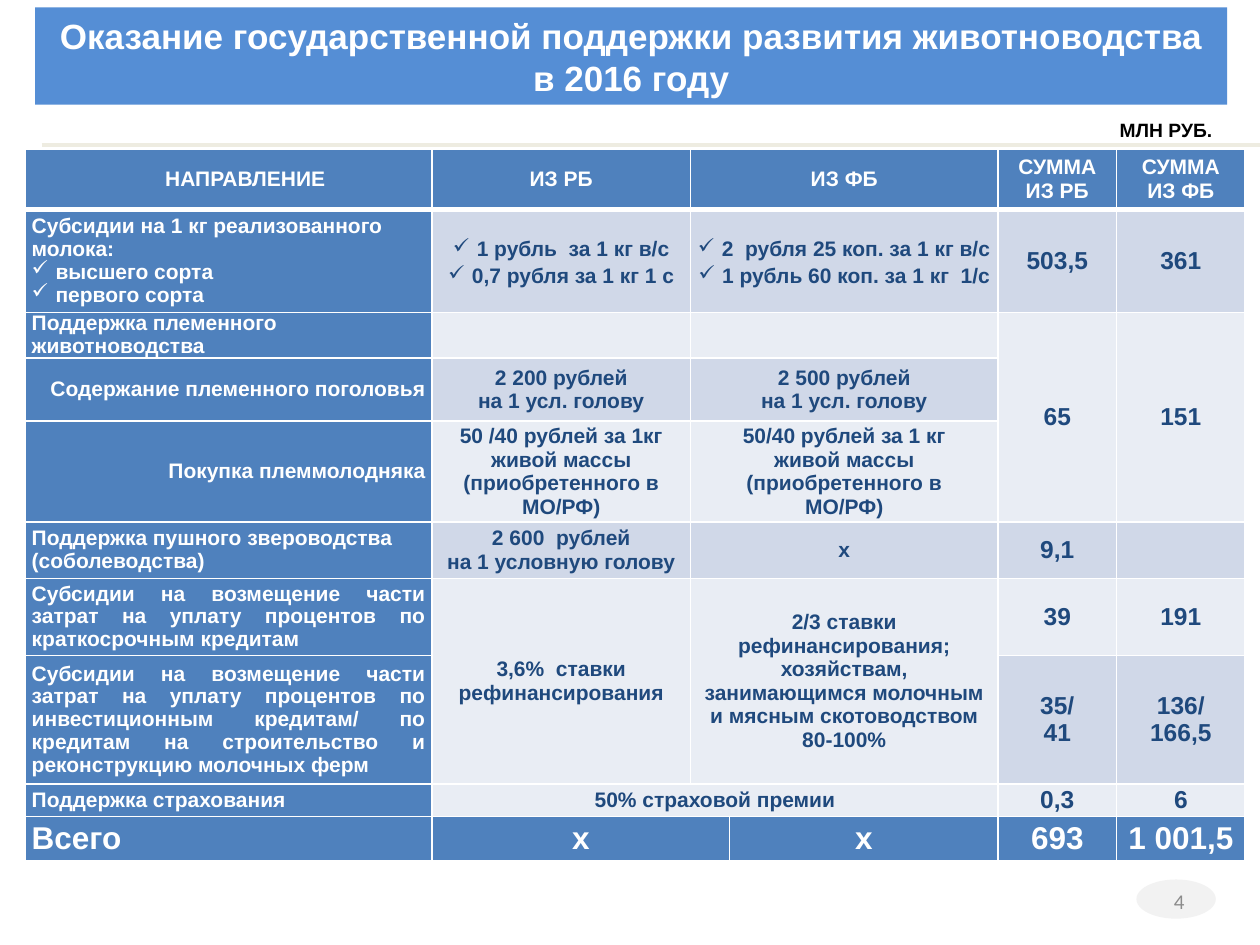
import dataclasses

import lxml.etree
import pptx
import pptx.dml.color
import pptx.enum.shapes
import pptx.enum.text
import pptx.oxml.ns
import pptx.util

Cm = pptx.util.Cm
Pt = pptx.util.Pt
Align = pptx.enum.text.PP_ALIGN
Middle = pptx.enum.text.MSO_ANCHOR.MIDDLE


@dataclasses.dataclass(frozen=True)
class Theme:
    """Colours, fonts and type sizes of the slide."""
    white: str = "FFFFFF"
    black: str = "000000"
    banner: str = "558ED5"
    rule: str = "EEECE1"
    heading: str = "4F81BD"
    bands: tuple = ("E9EDF4", "D0D8E8")
    value: str = "1F497D"
    oval: str = "F2F2F2"
    number: str = "8C8C8C"
    font: str = "Arial"
    number_font: str = "Calibri"
    title_size: int = 20
    total_size: int = 18
    amount_size: int = 14
    body_size: int = 12
    unit_size: int = 11


@dataclasses.dataclass(frozen=True)
class Box:
    """A region of the slide in centimetres."""
    left: float
    top: float
    width: float
    height: float


THEME = Theme()
CHECK = "✓ "
COLUMN_WIDTHS = (8.2, 5.21, 0.79, 5.41, 2.39, 2.59)
ROW_HEIGHTS = (1.22, 2.08, 0.91, 1.27, 2.03, 1.14, 1.55, 2.59, 0.66, 0.89)
AMOUNT_COLUMN = 4

DIRECTIONS = (
    ("НАПРАВЛЕНИЕ", Align.CENTER),
    ("Субсидии на 1 кг реализованного молока:\n✓ высшего сорта\n✓ первого сорта", Align.LEFT),
    ("Поддержка племенного животноводства", Align.LEFT),
    ("Содержание племенного поголовья", Align.RIGHT),
    ("Покупка племмолодняка", Align.RIGHT),
    ("Поддержка пушного звероводства (соболеводства)", Align.LEFT),
    ("Субсидии на возмещение части затрат на уплату процентов по краткосрочным кредитам",
     Align.JUSTIFY),
    ("Субсидии на возмещение части затрат на уплату процентов по инвестиционным кредитам/ "
     "по кредитам на строительство и реконструкцию молочных ферм", Align.JUSTIFY),
    ("Поддержка страхования", Align.JUSTIFY),
    ("Всего", Align.JUSTIFY),
)

VALUES = {
    (0, 1): "ИЗ РБ",
    (0, 2): "ИЗ ФБ",
    (0, 4): "СУММА\nИЗ РБ",
    (0, 5): "СУММА\nИЗ ФБ",
    (1, 1): "✓ 1 рубль  за 1 кг в/с\n✓ 0,7 рубля за 1 кг 1 с",
    (1, 2): "✓ 2  рубля 25 коп. за 1 кг в/с\n✓ 1 рубль 60 коп. за 1 кг  1/с",
    (1, 4): "503,5",
    (1, 5): "361",
    (2, 4): "65",
    (2, 5): "151",
    (3, 1): "2 200 рублей\nна 1 усл. голову",
    (3, 2): "2 500 рублей\nна 1 усл. голову",
    (4, 1): "50 /40 рублей за 1кг живой массы (приобретенного в МО/РФ)",
    (4, 2): "50/40 рублей за 1 кг\nживой массы\n(приобретенного в\nМО/РФ)",
    (5, 1): "2 600  рублей\nна 1 условную голову",
    (5, 2): "х",
    (5, 4): "9,1",
    (6, 1): "3,6%  ставки рефинансирования",
    (6, 2): "2/3 ставки рефинансирования;\nхозяйствам, занимающимся молочным "
            "и мясным скотоводством\n80-100%",
    (6, 4): "39",
    (6, 5): "191",
    (7, 4): "35/\n41",
    (7, 5): "136/\n166,5",
    (8, 1): "50% страховой премии",
    (8, 4): "0,3",
    (8, 5): "6",
    (9, 1): "х",
    (9, 3): "х",
    (9, 4): "693",
    (9, 5): "1 001,5",
}

MERGES = [((row, 2), (row, 3)) for row in range(6)] + [
    ((2, 4), (4, 4)), ((2, 5), (4, 5)), ((6, 1), (7, 1)),
    ((6, 2), (7, 3)), ((8, 1), (8, 3)), ((9, 1), (9, 2)),
]


def rgb(value):
    """Turn a hex string into a colour."""
    return pptx.dml.color.RGBColor.from_string(value)


def fill_solid(target, color):
    """Give a shape or cell a plain fill."""
    target.fill.solid()
    target.fill.fore_color.rgb = rgb(color)


def format_text(text_frame, size, color, align, bold=True, font=THEME.font):
    """Format every paragraph and run of a text frame."""
    for paragraph in text_frame.paragraphs:
        paragraph.alignment = align
        for run in paragraph.runs:
            run.font.size = Pt(size)
            run.font.bold = bold
            run.font.name = font
            run.font.color.rgb = rgb(color)


def place(shape, left, top, width, height):
    """Position a shape in centimetres."""
    shape.left, shape.top, shape.width, shape.height = map(Cm, (left, top, width, height))


def add_bullet(paragraph):
    """Replace a leading check mark with a real bullet."""
    paragraph.text = paragraph.text.removeprefix(CHECK)
    properties = paragraph._p.get_or_add_pPr()
    properties.set("marL", str(Cm(0.48)))
    properties.set("indent", str(-Cm(0.48)))
    bullet = lxml.etree.SubElement(properties, pptx.oxml.ns.qn("a:buChar"))
    bullet.set("char", CHECK.strip())


def add_borders(cell, row):
    """Draw white cell borders, heavier under the heading row."""
    properties = cell._tc.get_or_add_tcPr()
    heavy = {(0, "lnB"), (1, "lnT")}
    for side in ("lnL", "lnR", "lnT", "lnB"):
        line = lxml.etree.SubElement(properties, pptx.oxml.ns.qn(f"a:{side}"))
        line.set("w", str(Pt(3 if (row, side) in heavy else 1)))
        fill = lxml.etree.SubElement(line, pptx.oxml.ns.qn("a:solidFill"))
        color = lxml.etree.SubElement(fill, pptx.oxml.ns.qn("a:srgbClr"))
        color.set("val", THEME.white)


def format_cell(cell, row, column):
    """Fill one table cell with its text, colours and borders."""
    last = len(ROW_HEIGHTS) - 1
    outer = row in (0, last)
    heading = outer or column == 0
    cell.margin_left = cell.margin_right = Cm(0.13)
    cell.margin_top = cell.margin_bottom = 0
    cell.vertical_anchor = Middle
    add_borders(cell, row)
    fill_solid(cell, THEME.heading if heading else THEME.bands[row % 2])
    text, align = DIRECTIONS[row] if column == 0 else (VALUES.get((row, column), ""), Align.CENTER)
    if not text:
        return
    cell.text_frame.text = text
    for paragraph in cell.text_frame.paragraphs:
        if column == 0 and not outer:
            paragraph.line_spacing = Pt(13)
        if paragraph.text.startswith(CHECK):
            if column:
                paragraph.line_spacing = 1.15
            add_bullet(paragraph)
    size = THEME.body_size
    if row == last:
        size = THEME.total_size
    elif row and column >= AMOUNT_COLUMN:
        size = THEME.amount_size
    format_text(cell.text_frame, size, THEME.white if heading else THEME.value, align)


def add_header(slide, box):
    """Place the title banner, the rule and the unit label."""
    title = slide.shapes.title
    place(title, box.left, box.top, box.width - 0.66, 1.96)
    fill_solid(title, THEME.banner)
    title.text_frame.text = "Оказание государственной поддержки развития животноводства в 2016 году"
    title.text_frame.auto_size = pptx.enum.text.MSO_AUTO_SIZE.NONE
    title.text_frame.vertical_anchor = Middle
    format_text(title.text_frame, THEME.title_size, THEME.white, Align.CENTER)

    rule_top = Cm(box.top + box.height)
    rule = slide.shapes.add_connector(
        pptx.enum.shapes.MSO_CONNECTOR.STRAIGHT,
        Cm(box.left + 0.13), rule_top, Cm(box.left + box.width), rule_top)
    rule.line.color.rgb = rgb(THEME.rule)
    rule.line.width = Pt(2.25)
    lxml.etree.SubElement(rule._element.spPr, pptx.oxml.ns.qn("a:effectLst"))

    unit = slide.shapes.add_textbox(
        Cm(box.left + 21.59), Cm(box.top + 2.11), Cm(2.41), Cm(0.74))
    unit.text_frame.text = "МЛН РУБ."
    unit.text_frame.word_wrap = False
    format_text(unit.text_frame, THEME.unit_size, THEME.black, Align.CENTER)


def add_support_table(slide, box):
    """Build the table of support measures and amounts."""
    frame = slide.shapes.add_table(
        len(ROW_HEIGHTS), len(COLUMN_WIDTHS),
        Cm(box.left), Cm(box.top), Cm(box.width), Cm(box.height))
    table = frame.table
    table.first_row = table.horz_banding = False
    for column, width in zip(table.columns, COLUMN_WIDTHS):
        column.width = Cm(width)
    for row, height in zip(table.rows, ROW_HEIGHTS):
        row.height = Cm(height)
    for row in range(len(ROW_HEIGHTS)):
        for column in range(len(COLUMN_WIDTHS)):
            format_cell(table.cell(row, column), row, column)
    table.cell(0, 0).margin_left = Cm(0.8)
    for start, end in MERGES:
        table.cell(*start).merge(table.cell(*end))


def add_page_number(slide, box):
    """Place the page number over its oval."""
    oval = slide.shapes.add_shape(
        pptx.enum.shapes.MSO_SHAPE.OVAL,
        Cm(box.left + 4.7), Cm(box.top + 0.08), Cm(1.6), Cm(0.79))
    oval.shadow.inherit = False
    fill_solid(oval, THEME.oval)
    oval.line.fill.background()
    number = slide.shapes.add_textbox(
        Cm(box.left), Cm(box.top), Cm(box.width), Cm(box.height))
    number.text_frame.text = "4"
    number.text_frame.word_wrap = True
    number.text_frame.vertical_anchor = Middle
    format_text(number.text_frame, THEME.body_size, THEME.number, Align.RIGHT,
                bold=False, font=THEME.number_font)


def main():
    """Build and save the presentation."""
    presentation = pptx.Presentation()
    presentation.slide_width, presentation.slide_height = Cm(25.4), Cm(19.05)
    slide = presentation.slides.add_slide(presentation.slide_layouts[5])
    add_header(slide, Box(0.71, 0.15, 24.69, 2.77))
    add_support_table(slide, Box(0.51, 3, sum(COLUMN_WIDTHS), sum(ROW_HEIGHTS)))
    add_page_number(slide, Box(18.21, 17.65, 5.92, 1.02))
    presentation.save("out.pptx")


if __name__ == "__main__":
    main()
